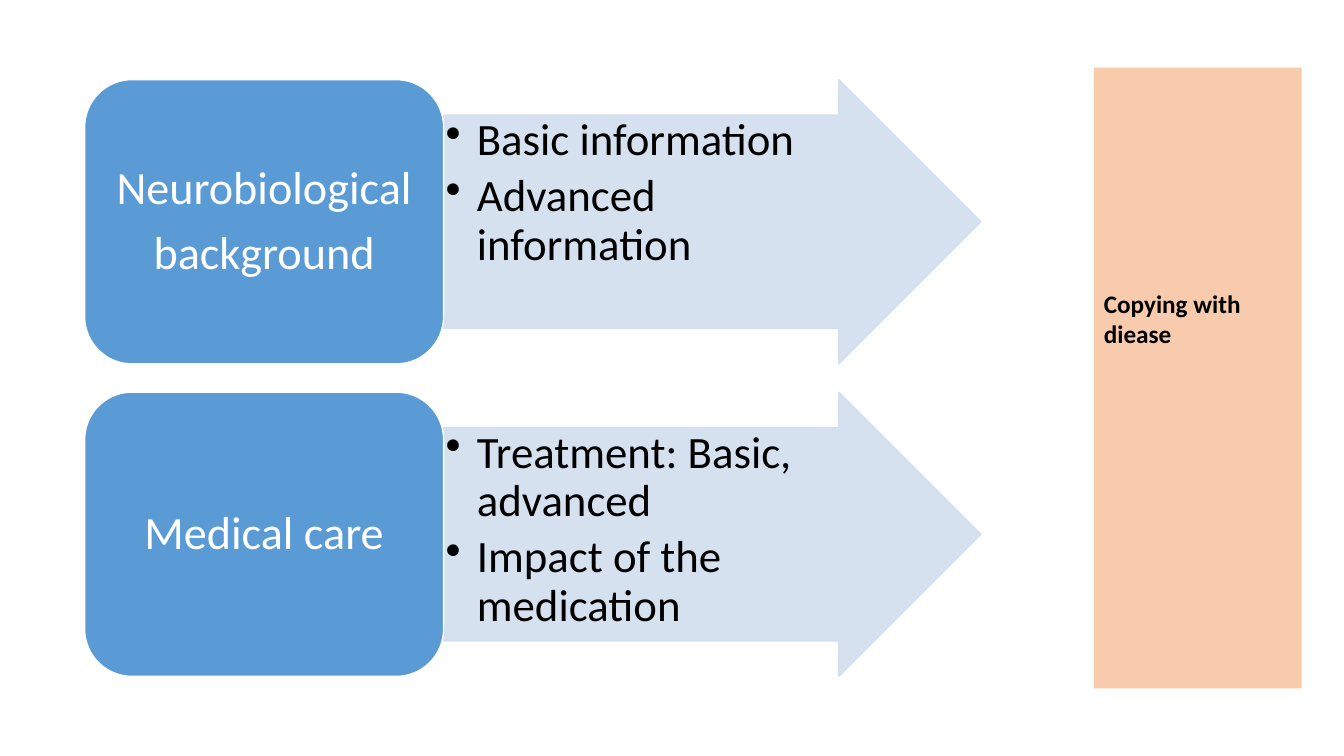
from lxml import etree
from pptx import Presentation
from pptx.dml.color import RGBColor
from pptx.enum.shapes import MSO_SHAPE
from pptx.enum.text import MSO_ANCHOR, PP_ALIGN
from pptx.oxml.ns import qn
from pptx.util import Inches, Pt

BLUE = RGBColor(0x5B, 0x9B, 0xD5)
PALE_BLUE = RGBColor(0xD2, 0xDE, 0xEF)
PEACH = RGBColor(0xF8, 0xCB, 0xAD)
WHITE = RGBColor(0xFF, 0xFF, 0xFF)
BLACK = RGBColor(0x00, 0x00, 0x00)

FONT = "Calibri"
ROW_TOP, ROW_STEP, ROW_HEIGHT = 0.79, 3.1, 2.82
LABEL_LEFT, LABEL_WIDTH = 0.84, 3.56
ARROW_LEFT, ARROW_WIDTH = LABEL_LEFT + LABEL_WIDTH, 5.33
LABEL_MARGIN, ARROW_MARGIN = 0.14, 0.35

TOPICS = [
    (["Neurobiological", "background"],
     ["Basic information", "Advanced information"]),
    (["Medical care"],
     ["Treatment: Basic, advanced", "Impact of the medication"]),
]


def add_block(page, kind, left, top, width, height, fill, line=None):
    """Add a filled preset shape, outlined only when a line colour is given."""
    block = page.shapes.add_shape(
        kind, Inches(left), Inches(top), Inches(width), Inches(height))
    block.shadow.inherit = False
    block.fill.solid()
    block.fill.fore_color.rgb = fill
    if line is None:
        block.line.fill.background()
    else:
        block.line.color.rgb = line
        block.line.width = Pt(1)
    return block


def soften(block, percent):
    """Make the fill and line of a shape partly transparent."""
    for color in block.element.spPr.iter(qn("a:srgbClr")):
        etree.SubElement(color, qn("a:alpha"), val=str(percent * 1000))


def set_margins(frame, side, top, bottom):
    """Set wrapping and the inner margins of a text frame."""
    frame.word_wrap = True
    frame.margin_left = frame.margin_right = Inches(side)
    frame.margin_top, frame.margin_bottom = Inches(top), Inches(bottom)


def add_run(para, text, size, color, bold=False):
    """Add one formatted run to a paragraph."""
    span = para.add_run()
    span.text = text
    span.font.name = FONT
    span.font.size = Pt(size)
    span.font.bold = bold
    span.font.color.rgb = color


def add_bullet(para):
    """Give a paragraph a round bullet with a hanging indent."""
    properties = para._p.get_or_add_pPr()
    properties.set("marL", str(Inches(0.31)))
    properties.set("indent", str(-Inches(0.31)))
    etree.SubElement(properties, qn("a:buChar"), char="•")


def add_lines(page, lines, left, top, width, height, size, color, gap, margins):
    """Add a text box with one paragraph per line and return its frame."""
    box = page.shapes.add_textbox(
        Inches(left), Inches(top), Inches(width), Inches(height))
    frame = box.text_frame
    set_margins(frame, *margins)
    for index, text in enumerate(lines):
        para = frame.add_paragraph() if index else frame.paragraphs[0]
        para.line_spacing = 0.9
        para.space_after = Pt(gap)
        add_run(para, text, size, color)
    return frame


def add_details(page, top, details):
    """Add the arrow of a topic with its bulleted details."""
    arrow = add_block(page, MSO_SHAPE.RIGHT_ARROW, ARROW_LEFT, top,
                      ARROW_WIDTH, ROW_HEIGHT, PALE_BLUE, PALE_BLUE)
    arrow.adjustments[0] = 0.75
    arrow.adjustments[1] = 0.5
    soften(arrow, 90)
    frame = add_lines(page, details, ARROW_LEFT, top + ARROW_MARGIN, 4.28,
                      ROW_HEIGHT - 2 * ARROW_MARGIN, 32, BLACK, 5.5,
                      (0.02, 0.02, 0.02))
    for para in frame.paragraphs:
        add_bullet(para)


def add_label(page, top, lines):
    """Add the rounded label that names a topic."""
    add_block(page, MSO_SHAPE.ROUNDED_RECTANGLE, LABEL_LEFT, top,
              LABEL_WIDTH, ROW_HEIGHT, BLUE, WHITE)
    frame = add_lines(page, lines, LABEL_LEFT + LABEL_MARGIN,
                      top + LABEL_MARGIN, LABEL_WIDTH - 2 * LABEL_MARGIN,
                      ROW_HEIGHT - 2 * LABEL_MARGIN, 33, WHITE, 11,
                      (0.14, 0.07, 0.07))
    frame.vertical_anchor = MSO_ANCHOR.MIDDLE
    for para in frame.paragraphs:
        para.alignment = PP_ALIGN.CENTER


def add_outcome(page, text):
    """Add the tall outcome panel on the right."""
    panel = add_block(page, MSO_SHAPE.RECTANGLE, 10.85, 0.67, 2.06, 6.16, PEACH)
    frame = panel.text_frame
    set_margins(frame, 0.1, 2.19, 0.05)
    frame.vertical_anchor = MSO_ANCHOR.TOP
    para = frame.paragraphs[0]
    para.alignment = PP_ALIGN.LEFT
    add_run(para, text, 18, BLACK, bold=True)


def main():
    """Build the slide and save the deck."""
    deck = Presentation()
    deck.slide_width, deck.slide_height = Inches(13.33), Inches(7.5)
    page = deck.slides.add_slide(deck.slide_layouts[6])
    for row, (label, details) in enumerate(TOPICS):
        top = ROW_TOP + row * ROW_STEP
        add_details(page, top, details)
        add_label(page, top, label)
    add_outcome(page, "Copying with diease")
    deck.save("out.pptx")


if __name__ == "__main__":
    main()
